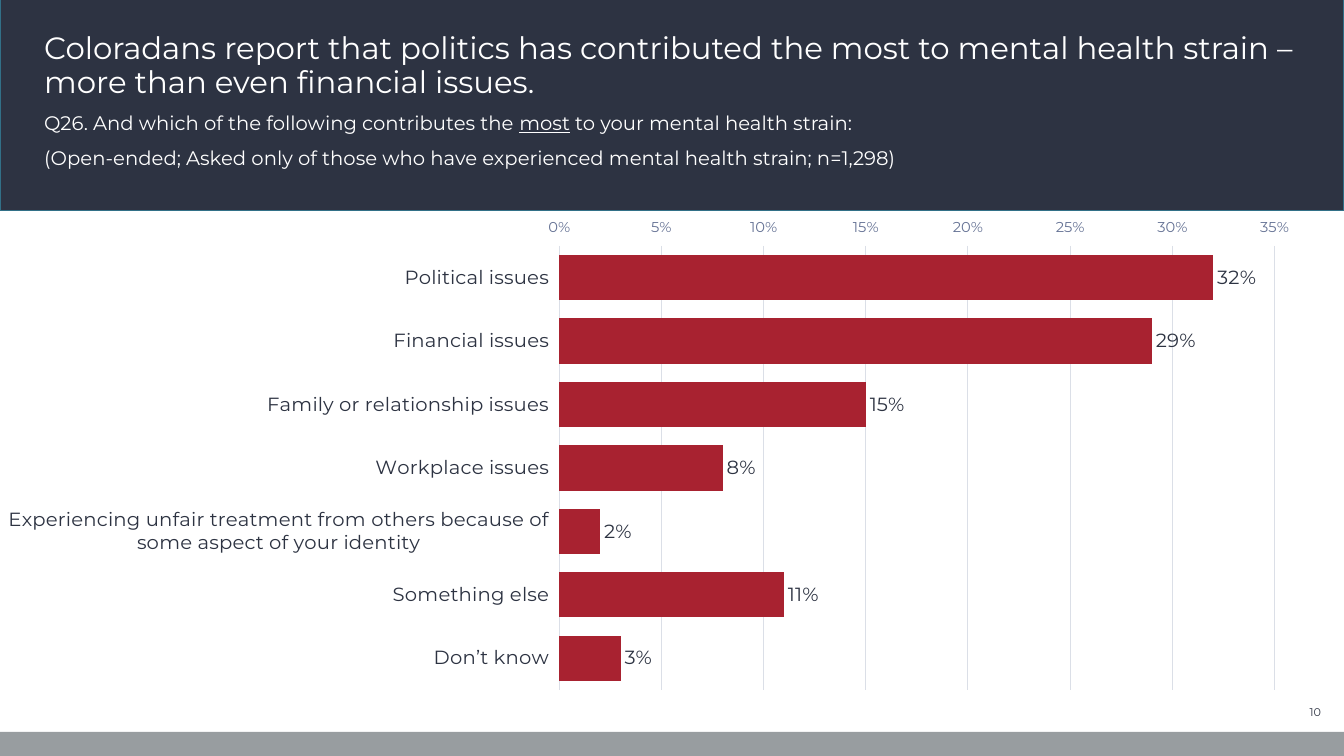
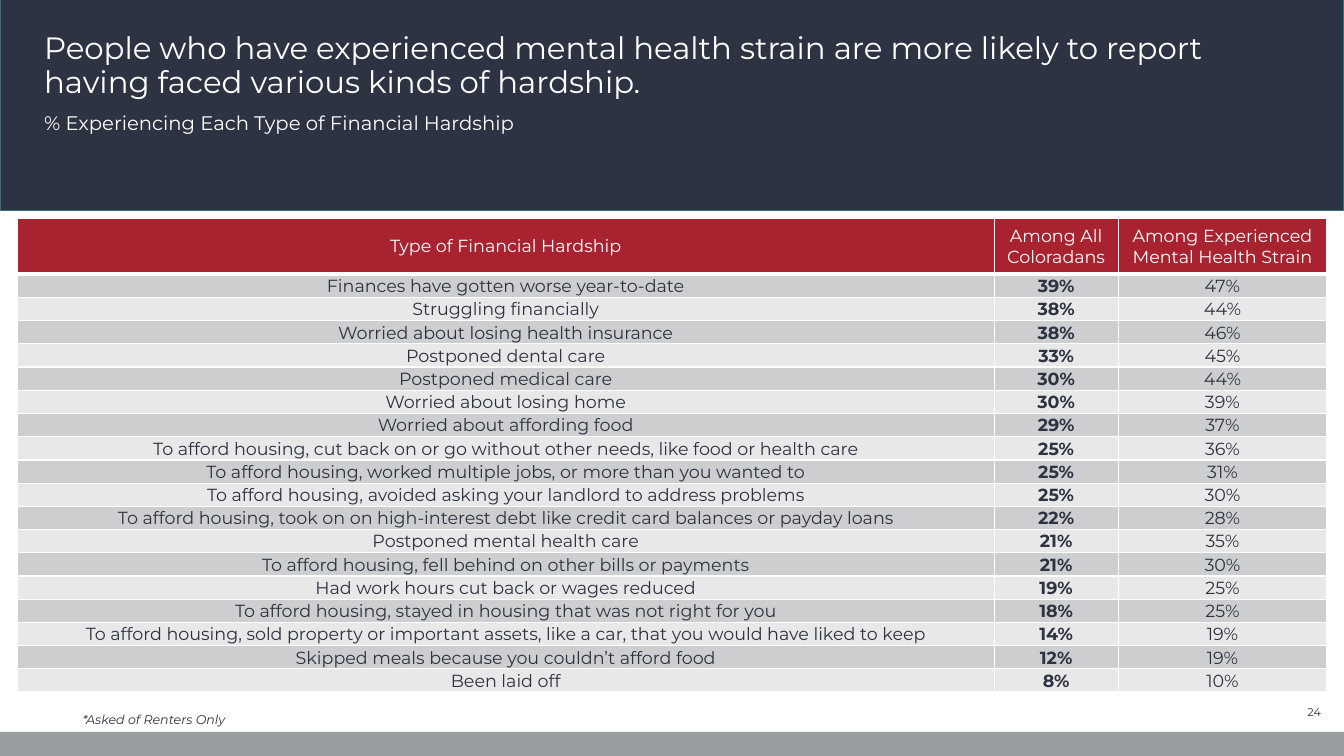
from lxml import etree
from pptx import Presentation
from pptx import util as u
from pptx.chart import data as cd
from pptx.dml.color import RGBColor
from pptx.enum import chart as ce, shapes, text
from pptx.oxml import ns

NAVY = RGBColor(0x2D, 0x33, 0x42)
TEAL = RGBColor(0x32, 0x70, 0x87)
GRAY = RGBColor(0x98, 0x9D, 0xA0)
RED = RGBColor(0xA8, 0x22, 0x30)
WHITE = RGBColor(0xFF, 0xFF, 0xFF)
SLATE = RGBColor(0x66, 0x73, 0x95)
GRID = RGBColor(0xDB, 0xDF, 0xE7)
BANDS = RGBColor(0xCD, 0xCE, 0xCF), RGBColor(0xE8, 0xE8, 0xE9)
FONT = "Montserrat"
WIDE, HIGH = 13.33, 7.5
LEFT, SPAN = 0.34, 12.64
ALIGN, ANCHOR = text.PP_ALIGN, text.MSO_ANCHOR

CAUSES = [
    ("Political issues", 0.32),
    ("Financial issues", 0.29),
    ("Family or relationship issues", 0.15),
    ("Workplace issues", 0.08),
    ("Experiencing unfair treatment from others because of some aspect of your identity", 0.02),
    ("Something else", 0.11),
    ("Don’t know", 0.03),
]
HEADS = ("Type of Financial Hardship", "Among All Coloradans",
         "Among Experienced\vMental Health Strain")
HARDSHIPS = [
    ("Finances have gotten worse year-to-date", 39, 47),
    ("Struggling financially", 38, 44),
    ("Worried about losing health insurance", 38, 46),
    ("Postponed dental care", 33, 45),
    ("Postponed medical care", 30, 44),
    ("Worried about losing home", 30, 39),
    ("Worried about affording food", 29, 37),
    ("To afford housing, cut back on or go without other needs, like food or health care", 25, 36),
    ("To afford housing, worked multiple jobs, or more than you wanted to", 25, 31),
    ("To afford housing, avoided asking your landlord to address problems", 25, 30),
    ("To afford housing, took on on high-interest debt like credit card balances or payday loans", 22, 28),
    ("Postponed mental health care", 21, 35),
    ("To afford housing, fell behind on other bills or payments", 21, 30),
    ("Had work hours cut back or wages reduced", 19, 25),
    ("To afford housing, stayed in housing that was not right for you", 18, 25),
    ("To afford housing, sold property or important assets, like a car, that you would have liked to keep", 14, 19),
    ("Skipped meals because you couldn’t afford food", 12, 19),
    ("Been laid off", 8, 10),
]


def place(box):
    return [u.Inches(n) for n in box]


def style(font, size, color, bold=False, italic=False):
    font.name = FONT
    font.size = u.Pt(size)
    font.color.rgb = color
    font.bold = bold
    font.italic = italic


def write(slide, box, lines, size, color, anchor=ANCHOR.TOP, align=ALIGN.LEFT, italic=False):
    frame = slide.shapes.add_textbox(*place(box)).text_frame
    frame.word_wrap = True
    frame.vertical_anchor = anchor
    for i, line in enumerate(lines):
        para = frame.add_paragraph() if i else frame.paragraphs[0]
        para.alignment = align
        para.line_spacing = 0.9
        para.space_before = u.Pt(10 if i else 0)
        for j, part in enumerate(line.split("|")):
            run = para.add_run()
            run.text = part
            style(run.font, size, color, italic=italic)
            run.font.underline = j % 2 == 1


def band(slide, box, fill, edge=None):
    shape = slide.shapes.add_shape(shapes.MSO_SHAPE.RECTANGLE, *place(box))
    shape.shadow.inherit = False
    shape.fill.solid()
    shape.fill.fore_color.rgb = fill
    if edge is None:
        shape.line.fill.background()
    else:
        shape.line.color.rgb = edge
        shape.line.width = u.Pt(1)


def base(deck, title, notes, number):
    slide = deck.slides.add_slide(deck.slide_layouts[6])
    band(slide, (0, -0.03, WIDE, 2.12), NAVY, TEAL)
    band(slide, (0, HIGH - 0.24, WIDE, 0.24), GRAY)
    write(slide, (LEFT, 0.07, SPAN, 0.97), [title], 22, WHITE, ANCHOR.BOTTOM)
    write(slide, (LEFT, 1.08, SPAN, 0.92), notes, 14, WHITE)
    write(slide, (12.42, 6.95, 0.78, 0.24), [str(number)], 8, NAVY, ANCHOR.MIDDLE, ALIGN.RIGHT)
    return slide


def layout(chart, x, y, w, h):
    area = chart._chartSpace.chart.plotArea
    for old in area.findall(ns.qn("c:layout")):
        area.remove(old)
    outer = etree.Element(ns.qn("c:layout"))
    inner = etree.SubElement(outer, ns.qn("c:manualLayout"))
    marks = (("layoutTarget", "inner"), ("xMode", "edge"), ("yMode", "edge"),
             ("x", x), ("y", y), ("w", w), ("h", h))
    for tag, val in marks:
        etree.SubElement(inner, ns.qn("c:" + tag)).set("val", str(val))
    area.insert(0, outer)


def bars(slide, box, rows):
    data = cd.CategoryChartData(number_format="0%")
    data.categories = [name for name, _ in rows]
    data.add_series("Series 1", [val for _, val in rows])
    kind = ce.XL_CHART_TYPE.BAR_CLUSTERED
    chart = slide.shapes.add_chart(kind, *place(box), data).chart
    chart.has_legend = False
    chart.has_title = False
    style(chart.font, 14, NAVY)

    cats, vals = chart.category_axis, chart.value_axis
    cats.reverse_order = True
    cats.crosses = ce.XL_AXIS_CROSSES.MAXIMUM
    cats.has_major_gridlines = False
    vals.minimum_scale, vals.maximum_scale, vals.major_unit = 0, 0.35, 0.05
    vals.tick_labels.number_format = "0%"
    vals.tick_labels.number_format_is_linked = False
    vals.has_major_gridlines = True
    vals.major_gridlines.format.line.color.rgb = GRID
    vals.major_gridlines.format.line.width = u.Pt(0.75)
    for axis, size, color in ((cats, 14, NAVY), (vals, 10.5, SLATE)):
        axis.format.line.fill.background()
        style(axis.tick_labels.font, size, color)

    plot = chart.plots[0]
    plot.gap_width = 40
    plot.vary_by_categories = False
    fill = plot.series[0].format.fill
    fill.solid()
    fill.fore_color.rgb = RED
    plot.has_data_labels = True
    tags = plot.data_labels
    tags.show_value = True
    tags.position = ce.XL_LABEL_POSITION.OUTSIDE_END
    tags.number_format = "0%"
    tags.number_format_is_linked = False
    style(tags.font, 14, NAVY)
    layout(chart, 0.43, 0.03, 0.55, 0.9)


def border(cell, **sides):
    props = cell._tc.get_or_add_tcPr()
    for side in "LRTB":
        line = etree.SubElement(props, ns.qn("a:ln" + side), w=str(u.Pt(sides.get(side, 1))))
        fill = etree.SubElement(line, ns.qn("a:solidFill"))
        etree.SubElement(fill, ns.qn("a:srgbClr"), val=str(WHITE))


def fill_cell(cell, words, back, color, bold=False):
    cell.fill.solid()
    cell.fill.fore_color.rgb = back
    cell.vertical_anchor = ANCHOR.MIDDLE
    cell.text_frame.text = words
    para = cell.text_frame.paragraphs[0]
    para.alignment = ALIGN.CENTER
    for run in para.runs:
        style(run.font, 12.5, color, bold)


def grid(slide, box, widths, head, rows):
    frame = slide.shapes.add_table(len(rows) + 1, len(widths), *place(box))
    table = frame.table
    for col, width in zip(table.columns, widths):
        col.width = u.Inches(width)
    table.rows[0].height = u.Inches(head)
    for c, words in enumerate(HEADS):
        cell = table.cell(0, c)
        border(cell, B=3)
        fill_cell(cell, words, RED, WHITE)
    for r, (name, *parts) in enumerate(rows, 1):
        table.rows[r].height = u.Inches((box[3] - head) / len(rows))
        for c, words in enumerate([name] + [f"{n}%" for n in parts]):
            cell = table.cell(r, c)
            cell.margin_left = cell.margin_right = cell.margin_top = u.Inches(0.01)
            cell.margin_bottom = 0
            border(cell, T=3 if r == 1 else 1)
            fill_cell(cell, words, BANDS[(r - 1) % 2], NAVY, c == 1)


def strain(deck):
    slide = base(
        deck,
        "Coloradans report that politics has contributed the most to mental health strain – "
        "more than even financial issues.",
        ["Q26. And which of the following contributes the |most| to your mental health strain:",
         "(Open-ended; Asked only of those who have experienced mental health strain; n=1,298)"],
        10)
    bars(slide, (0, 2.16, 12.9, 5.03), CAUSES)


def hardship(deck):
    slide = base(
        deck,
        "People who have experienced mental health strain are more likely to report "
        "having faced various kinds of hardship.",
        ["% Experiencing Each Type of Financial Hardship"],
        24)
    write(slide, (0.72, 6.95, 11.69, 0.31), ["*Asked of Renters Only"], 9, NAVY,
          ANCHOR.BOTTOM, italic=True)
    grid(slide, (0.17, 2.17, 13, 4.7), (9.69, 1.23, 2.07), 0.55, HARDSHIPS)


def main():
    deck = Presentation()
    deck.slide_width, deck.slide_height = u.Inches(WIDE), u.Inches(HIGH)
    strain(deck)
    hardship(deck)
    deck.save("out.pptx")


if __name__ == "__main__":
    main()
